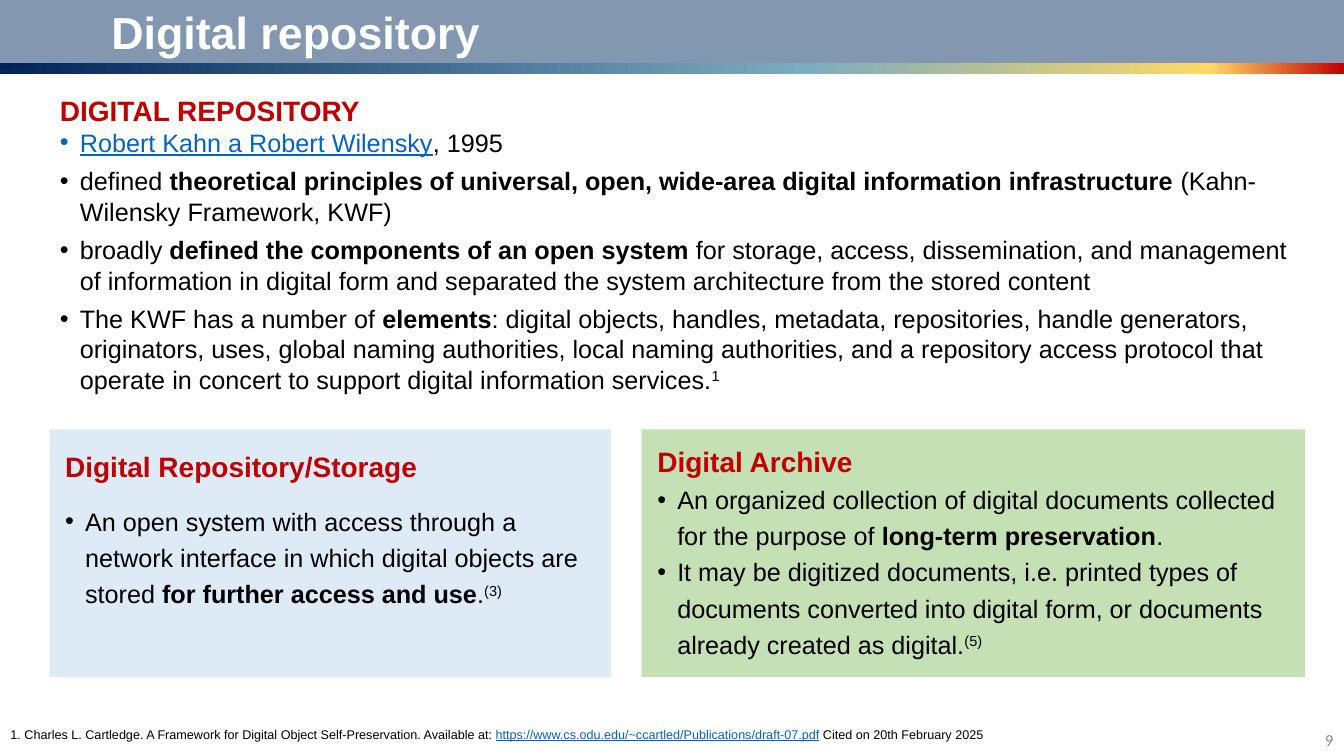
"""Build the slide on digital repositories and archives."""
from dataclasses import dataclass

from lxml import etree
from pptx import Presentation
from pptx import util as u
from pptx.dml.color import RGBColor
from pptx.enum import shapes, text
from pptx.oxml.ns import qn

SCALE = 9525
WHITE = RGBColor(0xFF, 0xFF, 0xFF)
BLACK = RGBColor(0, 0, 0)
RED = RGBColor(0xC0, 0, 0)
LINK = RGBColor(0x05, 0x63, 0xC1)
GRAY = RGBColor(0x8C, 0x8C, 0x8C)
SLATE = RGBColor(0x84, 0x97, 0xB0)
PALE = RGBColor(0xDE, 0xEB, 0xF7)
GREEN = RGBColor(0xC5, 0xE0, 0xB4)
NAVY = RGBColor(0x01, 0x24, 0x57)
TEAL = RGBColor(0x7C, 0xAC, 0xC0)
GOLD = RGBColor(0xFF, 0xD9, 0x66)
STOPS = ((0, NAVY), (60, TEAL), (90, GOLD), (100, RED))
LEFT, RIGHT = text.PP_ALIGN.LEFT, text.PP_ALIGN.RIGHT
TOP, MID = text.MSO_ANCHOR.TOP, text.MSO_ANCHOR.MIDDLE


@dataclass
class Run:
    """A stretch of text in one style."""
    words: str
    bold: bool = False
    link: bool = False
    sup: bool = False


@dataclass
class Para:
    """A paragraph with its size, colour and spacing."""
    runs: list[Run]
    size: int = 18
    color: RGBColor = BLACK
    bullet: bool = True
    before: int = 0
    line: float = 1.0
    align: text.PP_ALIGN = LEFT
    font: str = "Arial"


@dataclass
class Block:
    """A text area: place, paragraphs, fill, insets and anchor."""
    box: tuple[int, int, int, int]
    paras: list[Para]
    fill: RGBColor | None = None
    inset: tuple[int, int, int, int] = (10, 5, 10, 5)
    anchor: text.MSO_ANCHOR = TOP


def px(num: int) -> u.Emu:
    """Turn px into EMU."""
    return u.Emu(num * SCALE)


def head(words: str, before: int = 0, line: float = 1.0) -> Para:
    """Make a red heading."""
    return Para([Run(words, bold=True)], 20, RED, False, before, line)


def write(par, item: Para) -> None:
    """Write one paragraph run by run."""
    par.alignment = item.align
    par.line_spacing = item.line
    par.space_before = u.Pt(item.before)
    par.space_after = u.Pt(0)
    props = par._p.get_or_add_pPr()
    dent = px(19) if item.bullet else 0
    props.set("marL", str(dent))
    props.set("indent", str(-dent))
    if item.bullet:
        etree.SubElement(props, qn("a:buFont"), typeface="Arial")
        etree.SubElement(props, qn("a:buChar"), char="•")
    else:
        etree.SubElement(props, qn("a:buNone"))
    for part in item.runs:
        run = par.add_run()
        run.text = part.words
        font = run.font
        font.name, font.size = item.font, u.Pt(item.size)
        font.bold, font.underline = part.bold, part.link
        font.color.rgb = LINK if part.link else item.color
        if part.sup:
            run._r.get_or_add_rPr().set("baseline", "30000")


def place(shape, block: Block) -> None:
    """Move, format and fill a shape with text."""
    shape.left, shape.top, shape.width, shape.height = map(px, block.box)
    if block.fill is not None:
        shape.fill.solid()
        shape.fill.fore_color.rgb = block.fill
    frame = shape.text_frame
    frame.word_wrap = True
    frame.auto_size = text.MSO_AUTO_SIZE.NONE
    frame.vertical_anchor = block.anchor
    (frame.margin_left, frame.margin_top,
     frame.margin_right, frame.margin_bottom) = map(px, block.inset)
    for spot, item in enumerate(block.paras):
        write(frame.add_paragraph() if spot else frame.paragraphs[0], item)


def strip(slide, box: tuple[int, int, int, int]) -> None:
    """Draw the colour strip behind the title."""
    bar = slide.shapes.add_shape(shapes.MSO_SHAPE.RECTANGLE, *map(px, box))
    bar.shadow.inherit = False
    bar.line.fill.background()
    bar.fill.gradient()
    bar.fill.gradient_angle = 0
    stops = next(bar._element.spPr.iter(qn("a:gsLst")))
    for old in list(stops):
        stops.remove(old)
    for spot, color in STOPS:
        stop = etree.SubElement(stops, qn("a:gs"), pos=str(spot * 1000))
        etree.SubElement(stop, qn("a:srgbClr"), val=str(color))
    slide.shapes.title._element.addprevious(bar._element)


TITLE = Block((0, 0, 1280, 60), [
    Para([Run("Digital repository", bold=True)], 32, WHITE, False),
], SLATE, (106, 5, 10, 5), MID)

MAIN = Block((47, 84, 1205, 303), [
    head("DIGITAL REPOSITORY"),
    Para([Run("Robert Kahn a Robert Wilensky", link=True), Run(", 1995")]),
    Para([
        Run("defined "),
        Run("theoretical principles of universal, open, wide-area digital "
            "information infrastructure ", bold=True),
        Run("(Kahn-Wilensky Framework, KWF)"),
    ], before=6),
    Para([
        Run("broadly "),
        Run("defined the components of an open system ", bold=True),
        Run("for storage, access, dissemination, and management of "
            "information in digital form and separated the system "
            "architecture from the stored content"),
    ], before=6),
    Para([
        Run("The KWF has a number of "),
        Run("elements", bold=True),
        Run(": digital objects, handles, metadata, repositories, handle "
            "generators, originators, uses, global naming authorities, local "
            "naming authorities, and a repository access protocol that "
            "operate in concert to support digital information services."),
        Run("1", sup=True),
    ], before=6),
])

STORE = Block((47, 409, 535, 236), [
    head("Digital Repository/Storage", before=6),
    Para([
        Run("An open system with access through a network interface in which "
            "digital objects are stored "),
        Run("for further access and use", bold=True),
        Run("."),
        Run("(3)", sup=True),
    ], before=12, line=1.2),
], PALE, (15, 19, 10, 19))

ARCHIVE = Block((611, 409, 632, 236), [
    head("Digital Archive", line=1.2),
    Para([
        Run("An organized collection of digital documents collected for the "
            "purpose of "),
        Run("long-term preservation", bold=True),
        Run("."),
    ], line=1.2),
    Para([
        Run("It may be digitized documents, i.e. printed types of documents "
            "converted into digital form, or documents already created as "
            "digital."),
        Run("(5)", sup=True),
    ], line=1.2),
], GREEN, (15, 8, 10, 8))

PAGE = Block((1243, 695, 37, 19), [
    Para([Run("9")], 12, GRAY, False, align=RIGHT, font="Calibri"),
], anchor=MID)

NOTE = Block((0, 687, 951, 24), [
    Para([
        Run("1. Charles L. Cartledge. A Framework for Digital Object "
            "Self-Preservation. Available at: "),
        Run("https://www.cs.odu.edu/~ccartled/Publications/draft-07.pdf",
            link=True),
        Run(" Cited on 20th February 2025"),
    ], 9, bullet=False),
])


def main() -> None:
    """Build and save the deck."""
    deck = Presentation()
    deck.slide_width, deck.slide_height = px(1280), px(720)
    slide = deck.slides.add_slide(deck.slide_layouts[4])
    slots = {slot.placeholder_format.idx: slot for slot in slide.placeholders}
    for key, block in {0: TITLE, 1: MAIN, 2: STORE, 4: ARCHIVE}.items():
        place(slots[key], block)
    spare = slots[3]._element
    spare.getparent().remove(spare)
    strip(slide, (0, 49, 1280, 22))
    for block in (PAGE, NOTE):
        place(slide.shapes.add_textbox(*map(px, block.box)), block)
    deck.save("out.pptx")


if __name__ == "__main__":
    main()
